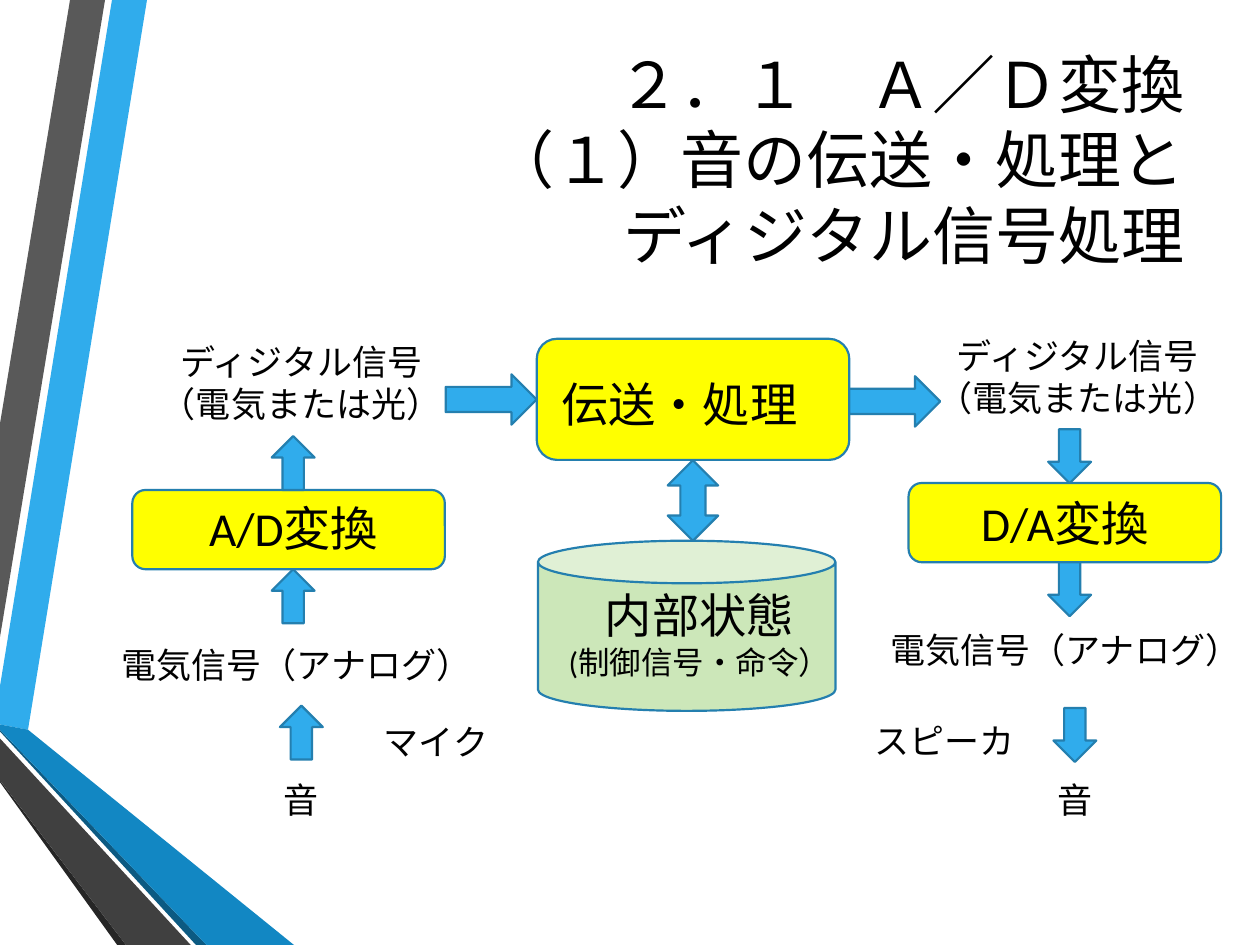
from pptx import Presentation
from pptx.dml.color import RGBColor
from pptx.enum import shapes, text
from pptx.util import Pt

THEME = {
    "font": "Calibri", "serif": "Times New Roman",
    "ink": "000000", "line": "247FAF", "arrow": "30ACEC",
    "step": "FFFF00", "state": "CCE7B9",
    "title": 36, "big": 27, "mid": 20, "small": 18, "edge": 1.25,
}
KIND = shapes.MSO_SHAPE
TITLE = ["２．１　Ａ／Ｄ変換", "（１）音の伝送・処理と", "ディジタル信号処理"]

# Side ribbons: colour, corner points
RIBBONS = [
    ("30ACEC", [(0, 391.5), (0, 414), (16, 417), (84.5, 0), (64, 0)]),
    ("595959", [(60, 0), (39.5, 0), (0, 242), (0, 364.5)]),
    ("262626", [(0, 445.5), (0, 447), (67, 540), (71.5, 540)]),
    ("0C5A82", [(0, 417), (0, 417.5), (112.5, 540), (117.5, 540)]),
    ("1287C3", [(0, 417), (117.5, 540), (168, 540), (16, 417), (0, 414)]),
    ("404040", [(0, 445.5), (71.5, 540), (109, 540), (0, 422)]),
]

# Boxes: kind, fill, left, top, width, height
BOXES = [
    (KIND.CAN, "state", 307.4, 309, 170, 97.2),
    (KIND.ROUNDED_RECTANGLE, "step", 306.7, 193.6, 178.6, 69.2),
    (KIND.ROUNDED_RECTANGLE, "step", 75.6, 280, 178.6, 45.3),
    (KIND.ROUNDED_RECTANGLE, "step", 519.2, 276, 178.6, 45.3),
]

# Arrows: kind, width, height, then the left and top of each
ARROWS = [
    (KIND.UP_DOWN_ARROW, 28.8, 46, [(381.6, 263)]),
    (KIND.RIGHT_ARROW, 52, 28.8, [(254.7, 213.9), (485.3, 215)]),
    (KIND.UP_ARROW, 24.5, 30.8, [(155.3, 249.2), (155.3, 325.3), (160, 403.2)]),
    (KIND.DOWN_ARROW, 24.5, 30.8, [(599, 245.3), (599, 321.3), (602, 404.6)]),
]

# Labels: left, top, width, height, lines of (words, size, font)
SIGNAL = [("ディジタル信号", "mid", "font"), ("（電気または光）", "mid", "serif")]
ANALOG = [("電気信号（アナログ）", "mid", "font")]
SOUND = [("音", "mid", "font")]
LABELS = [
    (298.8, 211, 178.6, 40, [("伝送・処理", "big", "font")]),
    (310.3, 331.2, 178.6, 62, [("内部状態", "big", "font"),
                               ("(制御信号・命令）", "small", "font")]),
    (82.8, 190.8, 178.6, 55.4, SIGNAL),
    (522.7, 187.4, 186.5, 55.4, SIGNAL),
    (43.9, 364.3, 251.3, 31.7, ANALOG),
    (497.5, 355.7, 222.5, 31.7, ANALOG),
    (78.5, 281.5, 178.6, 40, [("A/D変換", "big", "font")]),
    (519.2, 278.6, 178.6, 40, [("D/A変換", "big", "font")]),
    (82.8, 441.4, 178.6, 31.7, SOUND),
    (524.9, 441.4, 178.6, 31.7, SOUND),
    (198.7, 408.2, 100.8, 31.7, [("マイク", "mid", "font")]),
    (489.6, 407.5, 100.8, 31.7, [("スピーカ", "mid", "font")]),
]


def paint(shape, fill, line=None):
    shape.shadow.inherit = False
    shape.fill.solid()
    shape.fill.fore_color.rgb = RGBColor.from_string(fill)
    if line:
        shape.line.color.rgb = RGBColor.from_string(line)
        shape.line.width = Pt(THEME["edge"])
    else:
        shape.line.fill.background()


def add_run(para, words, size, font):
    run = para.add_run()
    run.text = words
    run.font.size = Pt(THEME[size])
    run.font.name = THEME[font]
    run.font.color.rgb = RGBColor.from_string(THEME["ink"])


def add_ribbon(slide, fill, points):
    (x, y), *rest = points
    pen = slide.shapes.build_freeform(x, y, scale=Pt(1))
    pen.add_line_segments(rest, close=True)
    paint(pen.convert_to_shape(), fill)


def add_block(slide, kind, fill, *place):
    shape = slide.shapes.add_shape(kind, *map(Pt, place))
    paint(shape, THEME[fill], THEME["line"])


def add_label(slide, *place, lines):
    frame = slide.shapes.add_textbox(*map(Pt, place)).text_frame
    frame.word_wrap = True
    for i, line in enumerate(lines):
        para = frame.add_paragraph() if i else frame.paragraphs[0]
        para.alignment = text.PP_ALIGN.CENTER
        add_run(para, *line)


def set_title(slide):
    title = slide.shapes.title
    title.left, title.top, title.width, title.height = map(Pt, (23, 36, 661, 109.4))
    frame = title.text_frame
    frame.auto_size = text.MSO_AUTO_SIZE.NONE
    frame.vertical_anchor = text.MSO_ANCHOR.MIDDLE
    para = frame.paragraphs[0]
    para.alignment = text.PP_ALIGN.RIGHT
    for i, words in enumerate(TITLE):
        if i:
            para.add_line_break()
        add_run(para, words, "title", "font")


def main():
    deck = Presentation()
    deck.slide_width, deck.slide_height = Pt(720), Pt(540)
    slide = deck.slides.add_slide(deck.slide_layouts[5])
    set_title(slide)
    for ribbon in RIBBONS:
        add_ribbon(slide, *ribbon)
    for box in BOXES:
        add_block(slide, *box)
    for kind, width, height, spots in ARROWS:
        for left, top in spots:
            add_block(slide, kind, "arrow", left, top, width, height)
    for *place, lines in LABELS:
        add_label(slide, *place, lines=lines)
    deck.save("out.pptx")


if __name__ == "__main__":
    main()
